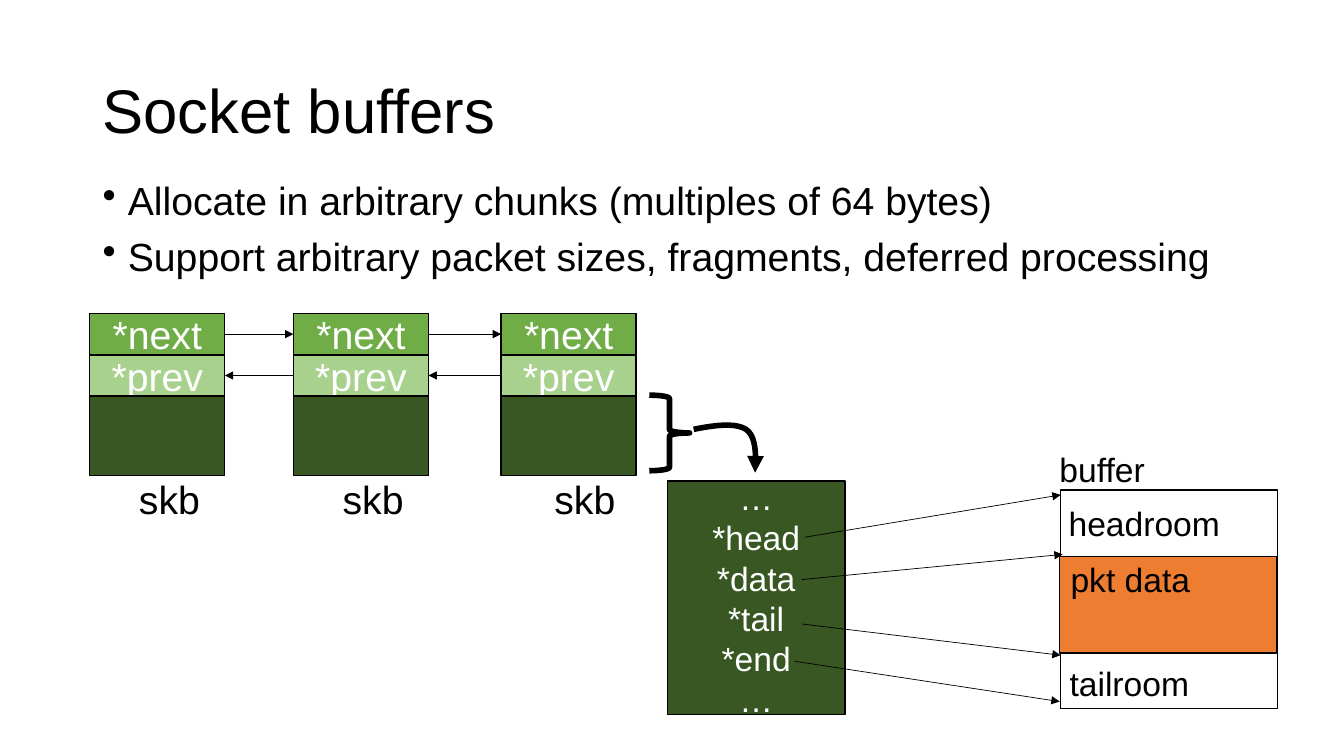
import pptx
import pptx.util
import pptx.dml.color
import pptx.enum.shapes
import pptx.enum.text
import pptx.oxml.ns
from lxml import etree

RGB = pptx.dml.color.RGBColor
SHAPE = pptx.enum.shapes.MSO_SHAPE
ALIGN = pptx.enum.text.PP_ALIGN
ANCHOR = pptx.enum.text.MSO_ANCHOR
FIT = pptx.enum.text.MSO_AUTO_SIZE
qn = pptx.oxml.ns.qn

PX = 9144  # EMU per px, 100 px to the inch
FONT = "Arial"
BLACK = RGB(0, 0, 0)
WHITE = RGB(255, 255, 255)
GREEN = RGB(0x70, 0xAD, 0x47)
LIGHT = RGB(0xA9, 0xD1, 0x8E)
DARK = RGB(0x38, 0x57, 0x23)
ORANGE = RGB(0xED, 0x7D, 0x31)

TITLE = "Socket buffers"
POINTS = [
    "Allocate in arbitrary chunks (multiples of 64 bytes)",
    "Support arbitrary packet sizes, fragments, deferred processing",
]
FIELDS = [("*next", GREEN, 41), ("*prev", LIGHT, 41), ("", DARK, 79)]
SKB_TOP, SKB_WIDE = 311, 134
SKBS = [(89, 128), (291, 330), (497, 540)]  # left of box, left of label
DETAIL = ["…", "*head", "*data", "*tail", "*end", "…"]
BUFFER = [  # text, left, top, width
    ("buffer", 1041, 440, 106),
    ("pkt data", 1052, 550, 140),
    ("headroom", 1050, 494, 172),
    ("tailroom", 1051, 653, 140),
]
ARROWS = [  # from detail field to buffer edge
    (798, 533, 1052, 491),
    (795, 575, 1054, 550),
    (795, 619, 1052, 650),
    (788, 656, 1051, 696),
]
CURVES = [
    [(688, 426), (708, 422), (729, 419), (740, 426)],
    [(740, 426), (750, 433), (750, 451), (749, 469)],
]
STEPS = 10

deck = pptx.Presentation()
deck.slide_width, deck.slide_height = 1333 * PX, 750 * PX
slide = deck.slides.add_slide(deck.slide_layouts[6])
shapes = slide.shapes


def emu(*sizes):
    return [size * PX for size in sizes]


def write(frame, lines, size, color, align=ALIGN.LEFT):
    frame.text = "\n".join(lines)
    for para in frame.paragraphs:
        para.alignment = align
        para.font.name = FONT
        para.font.size = pptx.util.Pt(size)
        para.font.color.rgb = color


def box(area, fill=None, lines=(), size=28, kind=SHAPE.RECTANGLE, wide=1):
    shape = shapes.add_shape(kind, *emu(*area))
    shape.shadow.inherit = False
    if fill is None:
        shape.fill.background()
    else:
        shape.fill.solid()
        shape.fill.fore_color.rgb = fill
    shape.line.color.rgb = BLACK
    shape.line.width = pptx.util.Pt(wide)
    if lines:
        shape.text_frame.vertical_anchor = ANCHOR.MIDDLE
        write(shape.text_frame, lines, size, WHITE, ALIGN.CENTER)
    return shape


def text(area, lines, size, wrap=False):
    frame = shapes.add_textbox(*emu(*area)).text_frame
    frame.word_wrap = wrap
    frame.auto_size = FIT.NONE if wrap else FIT.SHAPE_TO_FIT_TEXT
    write(frame, lines, size, BLACK)
    return frame


def point(line):
    """Put an arrowhead at the end of a line."""
    etree.SubElement(line.line._get_or_add_ln(), qn("a:tailEnd"), type="triangle")


def arrow(ends=(0, 0, 0, 0)):
    line = shapes.add_connector(
        pptx.enum.shapes.MSO_CONNECTOR.STRAIGHT, *emu(*ends))
    line.line.color.rgb = BLACK
    line.line.width = pptx.util.Pt(0.5)
    point(line)
    etree.SubElement(line._element.spPr, qn("a:effectLst"))
    return line


def bezier(knots, t):
    weights = ((1 - t) ** 3, 3 * t * (1 - t) ** 2, 3 * t * t * (1 - t), t ** 3)
    return tuple(round(PX * sum(w * k[axis] for w, k in zip(weights, knots)))
                 for axis in (0, 1))


# Heading and bullets
head = text((92, 40, 1150, 145), [TITLE], 44, True)
head.vertical_anchor = ANCHOR.MIDDLE
head.paragraphs[0].line_spacing = 0.9

body = text((92, 175, 1150, 120), POINTS, 28, True)
for para in body.paragraphs:
    para.line_spacing = 0.9
    para.space_before = pptx.util.Pt(10)
    props = para._p.get_or_add_pPr()
    props.set("marL", str(25 * PX))
    props.set("indent", str(-25 * PX))
    bullet = etree.Element(qn("a:buChar"), char="•")
    props.find(qn("a:defRPr")).addprevious(bullet)

# Linked list of socket buffers
chain = []
for left, label in SKBS:
    top, cells = SKB_TOP, []
    for name, fill, tall in FIELDS:
        cells.append(box((left, top, SKB_WIDE, tall), fill, [name] if name else ()))
        top += tall
    chain.append(cells)
    text((label, 467, 81, 57), ["skb"], 28)

for here, after in zip(chain, chain[1:]):
    ahead = arrow()
    ahead.begin_connect(here[0], 3)
    ahead.end_connect(after[0], 1)
    back = arrow()
    back.begin_connect(after[1], 1)
    back.end_connect(here[1], 3)

# Pointers into the packet buffer
box((662, 477, 176, 232), DARK, DETAIL, 24)
box((1052, 486, 215, 217))
box((1051, 552, 215, 96), ORANGE)
for name, left, top, wide in BUFFER:
    text((left, top, wide, 50), [name], 24)
for ends in ARROWS:
    arrow(ends)

# Brace and curved arrow to the detail box
box((644, 392, 40, 75), kind=SHAPE.RIGHT_BRACE, wide=4)
trail = [bezier(knots, step / STEPS)
         for knots in CURVES for step in range(1, STEPS + 1)]
pen = shapes.build_freeform(*bezier(CURVES[0], 0))
pen.add_line_segments(trail, close=False)
curve = pen.convert_to_shape()
curve.shadow.inherit = False
curve.fill.background()
curve.line.color.rgb = BLACK
curve.line.width = pptx.util.Pt(4)
point(curve)

deck.save("out.pptx")
